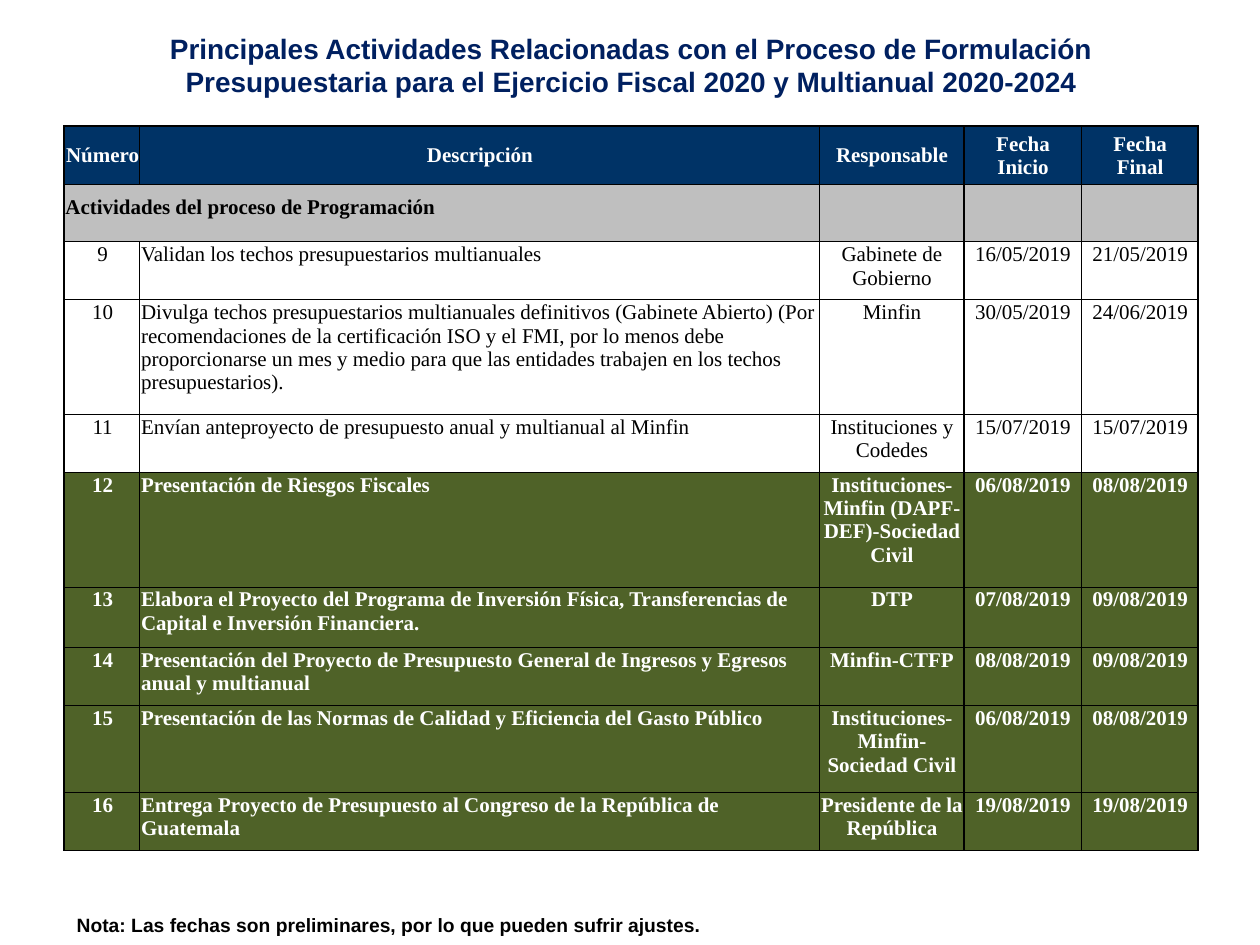
from lxml.etree import SubElement
from pptx import Presentation
from pptx.dml.color import RGBColor
from pptx.enum.text import MSO_ANCHOR, PP_ALIGN
from pptx.oxml.ns import qn
from pptx.util import Inches, Pt

COLORS = {
    "title": "002060",
    "header": "003366",
    "section": "BFBFBF",
    "milestone": "4F6228",
    "white": "FFFFFF",
    "black": "000000",
}
TITLE = (
    "Principales Actividades Relacionadas con el Proceso de Formulación "
    "Presupuestaria para el Ejercicio Fiscal 2020 y Multianual 2020-2024"
)
NOTE = "Nota: Las fechas son preliminares, por lo que pueden sufrir ajustes."
SECTION = "Actividades del proceso de Programación"
HEADINGS = ["Número", "Descripción", "Responsable", "Fecha\nInicio", "Fecha\nFinal"]
ACTIVITIES = [
    ("9", "Validan los techos presupuestarios multianuales",
     "Gabinete de Gobierno", "16/05/2019", "21/05/2019"),
    ("10", "Divulga techos presupuestarios multianuales definitivos (Gabinete Abierto) "
     "(Por recomendaciones de la certificación ISO y el FMI, por lo menos debe "
     "proporcionarse un mes y medio para que las entidades trabajen en los techos "
     "presupuestarios).",
     "Minfin", "30/05/2019", "24/06/2019"),
    ("11", "Envían anteproyecto de presupuesto anual y multianual al Minfin",
     "Instituciones y Codedes", "15/07/2019", "15/07/2019"),
]
MILESTONES = [
    ("12", "Presentación de Riesgos Fiscales",
     "Instituciones-Minfin (DAPF-DEF)-Sociedad Civil", "06/08/2019", "08/08/2019"),
    ("13", "Elabora el Proyecto del Programa de Inversión Física, Transferencias de "
     "Capital e Inversión Financiera.",
     "DTP", "07/08/2019", "09/08/2019"),
    ("14", "Presentación del Proyecto de Presupuesto General de Ingresos y Egresos "
     "anual y multianual",
     "Minfin-CTFP", "08/08/2019", "09/08/2019"),
    ("15", "Presentación de las Normas de Calidad y Eficiencia del Gasto Público",
     "Instituciones-Minfin-Sociedad Civil", "06/08/2019", "08/08/2019"),
    ("16", "Entrega Proyecto de Presupuesto al Congreso de la República de Guatemala",
     "Presidente de la República", "19/08/2019", "19/08/2019"),
]
COLUMN_WIDTHS = [0.6, 5.39, 1.15, 0.93, 0.93]
ROW_HEIGHTS = [0.46, 0.46, 0.46, 0.91, 0.46, 0.91, 0.48, 0.46, 0.69, 0.46]


def rgb(color):
    return RGBColor.from_string(COLORS[color])


def write(paragraph, text, size, font, color, bold):
    for index, line in enumerate(text.split("\n")):
        if index:
            paragraph.add_line_break()
        run = paragraph.add_run()
        run.text = line
        run.font.size = Pt(size)
        run.font.name = font
        run.font.bold = bold
        run.font.color.rgb = rgb(color)


def add_label(slide, box, text, size, color, align, anchor):
    frame = slide.shapes.add_textbox(*map(Inches, box)).text_frame
    frame.word_wrap = True
    frame.vertical_anchor = anchor
    paragraph = frame.paragraphs[0]
    paragraph.alignment = align
    write(paragraph, text, size, "Arial", color, True)


def add_borders(cell, row, column):
    widths = {
        "a:lnL": 1 if column in (0, 3) else 0.5,
        "a:lnR": 1 if column in (2, 4) else 0.5,
        "a:lnT": 1 if row == 0 else 0.5,
        "a:lnB": 0.5,
    }
    properties = cell._tc.get_or_add_tcPr()
    for side, width in widths.items():
        line = SubElement(properties, qn(side), w=str(Pt(width)))
        fill = SubElement(line, qn("a:solidFill"))
        SubElement(fill, qn("a:srgbClr"), val=COLORS["black"])


def style_cell(cell, fill, anchor):
    cell.margin_left = cell.margin_top = Inches(0.01)
    cell.margin_right = cell.margin_bottom = 0
    cell.vertical_anchor = anchor
    if fill:
        cell.fill.solid()
        cell.fill.fore_color.rgb = rgb(fill)
    else:
        cell.fill.background()


def fill_row(table, row, texts, fill, color, bold, anchor):
    for column, text in enumerate(texts):
        cell = table.cell(row, column)
        add_borders(cell, row, column)
        style_cell(cell, fill, anchor)
        paragraph = cell.text_frame.paragraphs[0]
        if row == 0 or column != 1:
            paragraph.alignment = PP_ALIGN.CENTER
        if text:
            write(paragraph, text, 12, "Times New Roman", color, bold)


def add_schedule(slide, left, top):
    table = slide.shapes.add_table(
        len(ROW_HEIGHTS), len(COLUMN_WIDTHS), Inches(left), Inches(top),
        Inches(sum(COLUMN_WIDTHS)), Inches(sum(ROW_HEIGHTS)),
    ).table
    for column, width in zip(table.columns, COLUMN_WIDTHS):
        column.width = Inches(width)
    for row, height in zip(table.rows, ROW_HEIGHTS):
        row.height = Inches(height)

    fill_row(table, 0, HEADINGS, "header", "white", True, MSO_ANCHOR.MIDDLE)
    final_heading = table.cell(0, 4).text_frame.paragraphs[0]
    final_heading._p.get_or_add_pPr().set("indent", str(Inches(-0.2)))

    fill_row(table, 1, [SECTION, "", "", "", ""], "section", "black", True,
             MSO_ANCHOR.BOTTOM)
    section = table.cell(1, 0)
    section.merge(table.cell(1, 1))
    section.margin_bottom = Inches(0.18)
    section.text_frame.paragraphs[0].alignment = PP_ALIGN.LEFT

    for row, activity in enumerate(ACTIVITIES, 2):
        fill_row(table, row, activity, None, "black", False, MSO_ANCHOR.TOP)
    for row, milestone in enumerate(MILESTONES, 2 + len(ACTIVITIES)):
        fill_row(table, row, milestone, "milestone", "white", True, MSO_ANCHOR.TOP)


def main():
    presentation = Presentation()
    presentation.slide_width = Inches(10)
    presentation.slide_height = Inches(7.5)
    slide = presentation.slides.add_slide(presentation.slide_layouts[6])
    add_label(slide, (0.51, -0.11, 9, 1.25), TITLE, 16, "title",
              PP_ALIGN.CENTER, MSO_ANCHOR.MIDDLE)
    add_label(slide, (0.51, 7.2, 7.95, 0.29), NOTE, 11, "black",
              PP_ALIGN.LEFT, MSO_ANCHOR.TOP)
    add_schedule(slide, 0.51, 1)
    presentation.save("out.pptx")


if __name__ == "__main__":
    main()
